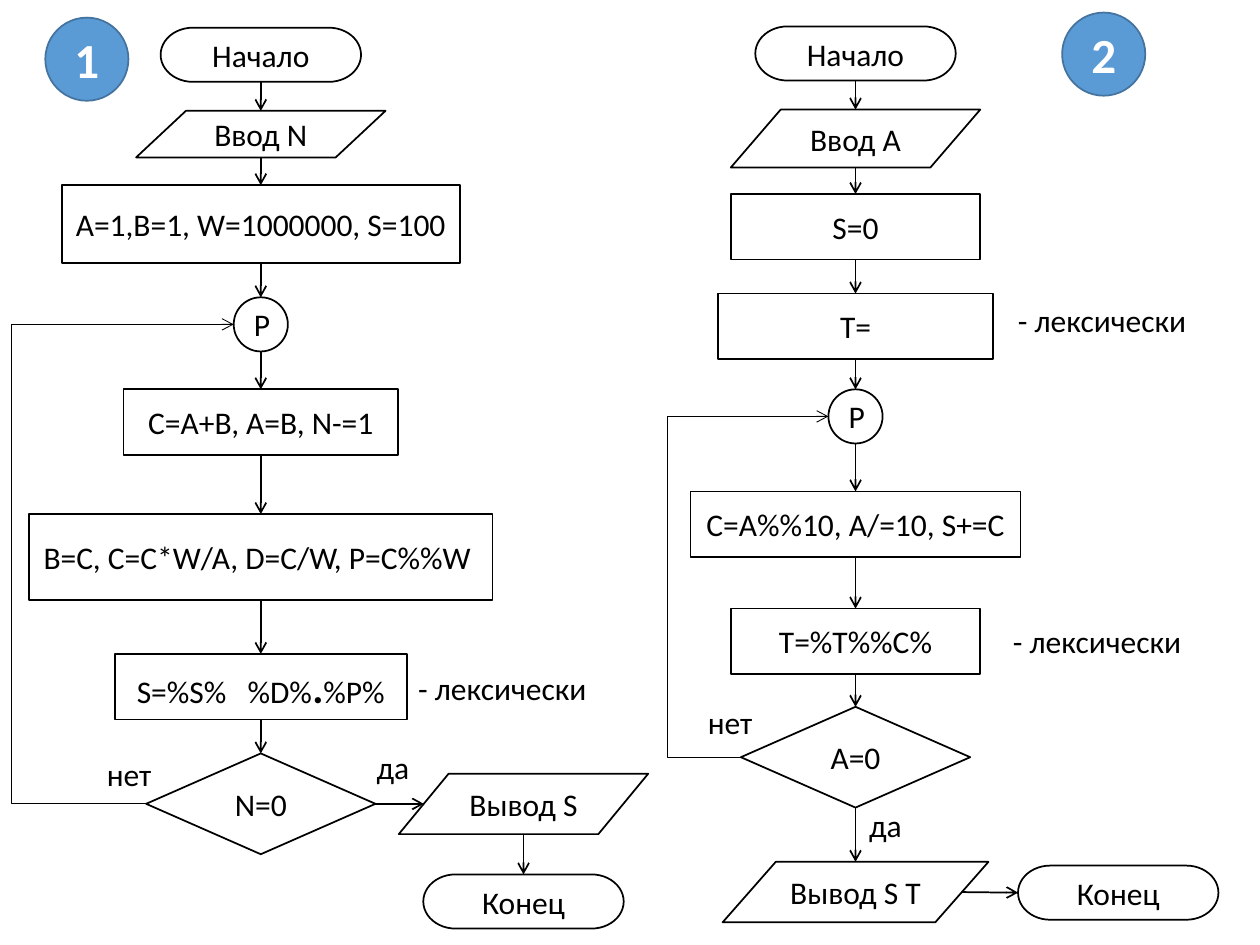
from pptx import Presentation
from pptx.dml.color import RGBColor
from pptx.enum.shapes import MSO_CONNECTOR, MSO_SHAPE
from pptx.enum.text import MSO_ANCHOR, MSO_AUTO_SIZE, PP_ALIGN
from pptx.oxml.ns import qn
from pptx.util import Inches, Pt
from lxml import etree

BLACK = RGBColor(0x00, 0x00, 0x00)
WHITE = RGBColor(0xFF, 0xFF, 0xFF)
BLUE = RGBColor(0x5B, 0x9B, 0xD5)
NAVY = RGBColor(0x43, 0x73, 0x9E)
FONT = "Calibri"

END = MSO_SHAPE.FLOWCHART_TERMINATOR
DATA = MSO_SHAPE.FLOWCHART_DATA
TEST = MSO_SHAPE.FLOWCHART_DECISION
BOX = MSO_SHAPE.RECTANGLE
DOT = MSO_SHAPE.OVAL
LINE = MSO_CONNECTOR.STRAIGHT
ELBOW = MSO_CONNECTOR.ELBOW
LEFT, CENTER = PP_ALIGN.LEFT, PP_ALIGN.CENTER
MIDDLE, TOP = MSO_ANCHOR.MIDDLE, MSO_ANCHOR.TOP
FIT = MSO_AUTO_SIZE.SHAPE_TO_FIT_TEXT

ROUND = (1.59, 0.43)
JOIN = (0.43, 0.43)
RHOMB = (1.82, 0.8)
BADGE = 0.66
SLANT = 0.1  # share of a data block's width cut off at mid-height

# Steps: kind, text, column, top, (width, height); in order of flow.
# Labels: text, left, top, width.
CHARTS = [
    {
        "badge": ("1", 0.36, 0.14),
        "cols": (2.07, 4.155),
        "lane": 0.09,
        "steps": [
            (END, "Начало", 0, 0.22, ROUND),
            (DATA, "Ввод N", 0, 0.88, (1.98, 0.37)),
            (BOX, "A=1,B=1, W=1000000, S=100", 0, 1.47, (3.16, 0.62)),
            (DOT, "P", 0, 2.36, JOIN),
            (BOX, "C=A+B, A=B, N-=1", 0, 3.09, (2.18, 0.52)),
            (BOX, "B=C, C=C*W/A, D=C/W, P=C%%W ", 0, 4.08, (3.68, 0.68)),
            (BOX, ["S=%S%   %D%", (".", 24, True), "%P%"], 0, 5.19, (2.32, 0.52)),
            (TEST, "N=0", 0, 5.98, RHOMB),
            (DATA, "Вывод S", 1, 6.14, (1.98, 0.48)),
            (END, "Конец", 1, 6.94, ROUND),
        ],
        "labels": [
            ("да", 2.89, 5.89, 0.46),
            ("нет", 0.75, 5.94, 0.56),
            ("- лексически", 3.22, 5.26, 1.56),
        ],
    },
    {
        "badge": ("2", 8.43, 0.1),
        "cols": (6.79, 8.875),
        "lane": 5.3,
        "steps": [
            (END, "Начало", 0, 0.21, ROUND),
            (DATA, "Ввод A", 0, 0.87, (1.98, 0.46)),
            (BOX, "S=0", 0, 1.54, (1.98, 0.52)),
            (BOX, "T=", 0, 2.33, (2.18, 0.52)),
            (DOT, "P", 0, 3.09, JOIN),
            (BOX, "C=A%%10, A/=10, S+=C ", 0, 3.9, (2.62, 0.52)),
            (BOX, "T=%T%%C%", 0, 4.83, (1.98, 0.52)),
            (TEST, "A=0", 0, 5.61, RHOMB),
            (DATA, "Вывод S T", 0, 6.84, (2.11, 0.48)),
            (END, "Конец", 1, 6.87, ROUND),
        ],
        "labels": [
            ("да", 6.8, 6.35, 0.46),
            ("нет", 5.52, 5.53, 0.56),
            ("- лексически", 7.94, 4.89, 1.56),
            ("- лексически", 7.98, 2.34, 1.56),
        ],
    },
]


def write(shape, text, size=18, bold=False, color=BLACK, align=CENTER, anchor=MIDDLE):
    """Fill a shape with a string, or a list of strings and (text, size, bold)."""
    frame = shape.text_frame
    frame.vertical_anchor = anchor
    para = frame.paragraphs[0]
    para.alignment = align
    for part in [text] if isinstance(text, str) else text:
        word, pts, heavy = (part, size, bold) if isinstance(part, str) else part
        run = para.add_run()
        run.text = word
        run.font.name = FONT
        run.font.size = Pt(pts)
        run.font.bold = heavy
        run.font.color.rgb = color


def block(group, kind, left, top, width, height, fill=WHITE, edge=BLACK):
    shape = group.shapes.add_shape(
        kind, Inches(left), Inches(top), Inches(width), Inches(height))
    shape.shadow.inherit = False
    shape.fill.solid()
    shape.fill.fore_color.rgb = fill
    shape.line.color.rgb = edge
    shape.line.width = Pt(1)
    return shape


def arrow(group, start, end, kind=LINE, width=1):
    link = group.shapes.add_connector(kind, *map(Inches, start + end))
    link.line.color.rgb = BLACK
    link.line.width = Pt(width)
    etree.SubElement(link.line._get_or_add_ln(), qn("a:tailEnd"), type="arrow")
    etree.SubElement(link._element.spPr, qn("a:effectLst"))
    return link


def loop(group, start, end, lane):
    """Lead an elbow arrow back through a vertical lane at x = lane."""
    link = arrow(group, start, end, ELBOW, 0.5)
    share = (lane - start[0]) / (end[0] - start[0])
    geom = link._element.spPr.find(qn("a:prstGeom"))
    guides = geom.find(qn("a:avLst"))
    if guides is None:
        guides = etree.SubElement(geom, qn("a:avLst"))
    etree.SubElement(guides, qn("a:gd"), name="adj1", fmla=f"val {round(share * 100000)}")


def side(step, cols, sign):
    """Point at mid-height on the left (-1) or right (1) edge of a step."""
    kind, _, col, top, (width, height) = step
    cut = SLANT * width if kind == DATA else 0
    return cols[col] + sign * (width / 2 - cut), top + height / 2


def draw(group, chart):
    cols, steps = chart["cols"], chart["steps"]
    for kind, text, col, top, (width, height) in steps:
        write(block(group, kind, cols[col] - width / 2, top, width, height), text)

    for here, after in zip(steps, steps[1:]):
        if here[2] == after[2]:
            x = cols[here[2]]
            arrow(group, (x, here[3] + here[4][1]), (x, after[3]))
        else:
            arrow(group, side(here, cols, 1), side(after, cols, -1))

    test = next(step for step in steps if step[0] == TEST)
    join = next(step for step in steps if step[0] == DOT)
    loop(group, side(test, cols, -1), side(join, cols, -1), chart["lane"])

    for text, left, top, width in chart["labels"]:
        label = group.shapes.add_textbox(
            Inches(left), Inches(top), Inches(width), Inches(0.4))
        label.text_frame.word_wrap = False
        label.text_frame.auto_size = FIT
        write(label, text, align=LEFT, anchor=TOP)

    mark, left, top = chart["badge"]
    write(block(group, DOT, left, top, BADGE, BADGE, BLUE, NAVY),
          mark, size=28, bold=True, color=WHITE)


def main():
    deck = Presentation()
    deck.slide_width, deck.slide_height = Inches(10), Inches(7.5)
    slide = deck.slides.add_slide(deck.slide_layouts[6])
    for chart in CHARTS:
        draw(slide.shapes.add_group_shape(), chart)
    deck.save("out.pptx")


if __name__ == "__main__":
    main()
